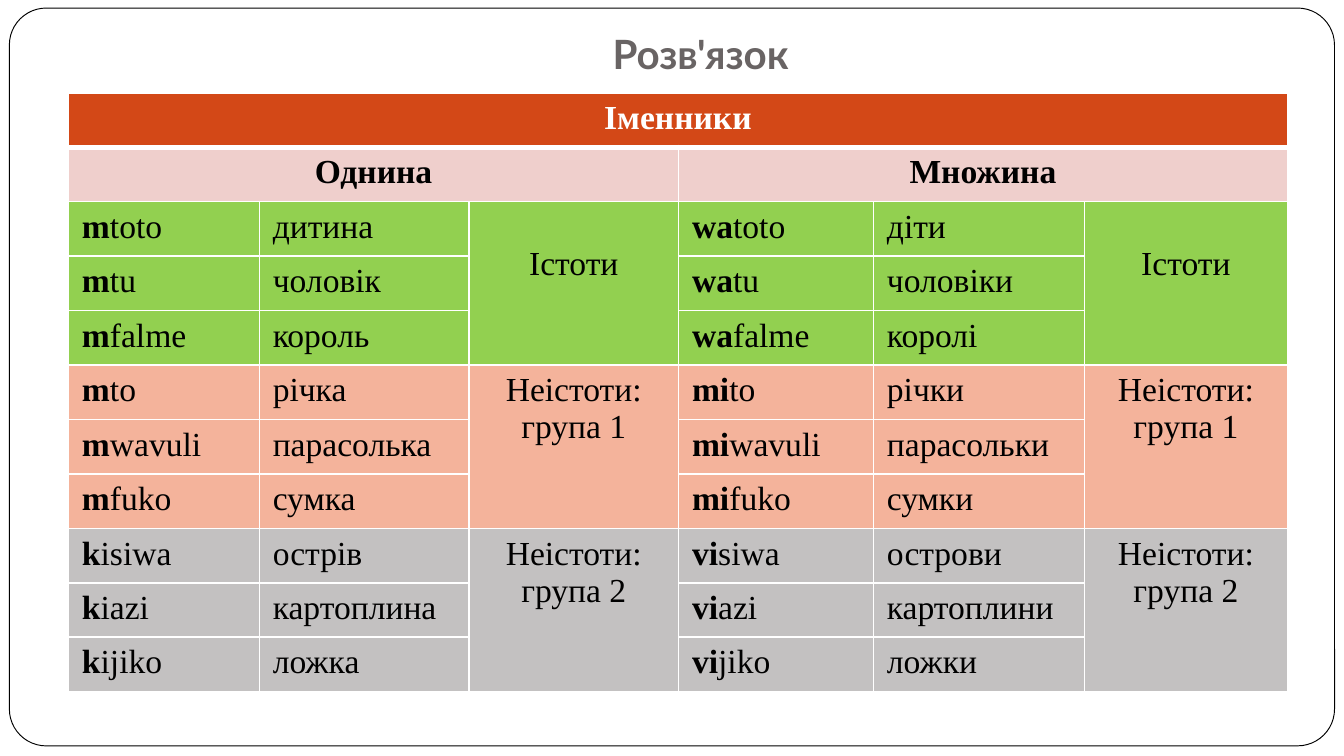
from lxml.etree import SubElement
from pptx import Presentation
from pptx.dml.color import RGBColor
from pptx.enum.shapes import MSO_SHAPE
from pptx.enum.text import MSO_ANCHOR, PP_ALIGN
from pptx.oxml.ns import qn
from pptx.util import Inches, Pt

COLORS = {
    "white": "FFFFFF", "black": "000000", "title": "696464",
    "header": "D34817", "number": "EFCFCC",
    "green": "92D050", "peach": "F4B39B", "gray": "C3C1C1",
}
COL_WIDTHS = [1.42, 1.56, 1.56, 1.45, 1.57, 1.51]
ROWS, TABLE_HEIGHT = 11, 4.46
GROUPS = [
    ("Істоти", "green", "m", "wa", [
        ("toto", "дитина", "toto", "діти"),
        ("tu", "чоловік", "tu", "чоловіки"),
        ("falme", "король", "falme", "королі")]),
    ("Неістоти: група 1", "peach", "m", "mi", [
        ("to", "річка", "to", "річки"),
        ("wavuli", "парасолька", "wavuli", "парасольки"),
        ("fuko", "сумка", "fuko", "сумки")]),
    ("Неістоти: група 2", "gray", "k", "vi", [
        ("isiwa", "острів", "siwa", "острови"),
        ("iazi", "картоплина", "azi", "картоплини"),
        ("ijiko", "ложка", "jiko", "ложки")]),
]


def rgb(name):
    return RGBColor.from_string(COLORS[name])


def write(cell, parts, color="black", align=PP_ALIGN.LEFT):
    p = cell.text_frame.paragraphs[0]
    p.alignment = align
    p.font.name, p.font.size = "Times New Roman", Pt(18)
    p.font.color.rgb = rgb(color)
    for text, bold in parts:
        r = p.add_run()
        r.text = text
        r.font.name, r.font.size, r.font.bold = "Times New Roman", Pt(18), bold
        r.font.color.rgb = rgb(color)


prs = Presentation()
prs.slide_width = Inches(10)
prs.slide_height = prs.slide_width * 9 // 16
s = prs.slides.add_slide(prs.slide_layouts[5])

title = s.shapes.title
title.left, title.top, title.width, title.height = map(Inches, (1, 0.22, 8.5, 0.46))
tf = title.text_frame
tf.text = "Розв'язок "
tf.vertical_anchor = MSO_ANCHOR.BOTTOM
tf.margin_bottom = Inches(0.1)
p = tf.paragraphs[0]
p.alignment = PP_ALIGN.CENTER
p.font.name, p.font.size, p.font.bold = "Lato", Pt(21.6), True
p.font.color.rgb = rgb("title")

frame = s.shapes.add_shape(MSO_SHAPE.ROUNDED_RECTANGLE, *map(Inches, (0.07, 0.06, 9.86, 5.49)))
frame.adjustments[0] = 0.05
frame.shadow.inherit = False
frame.fill.solid()
frame.fill.fore_color.rgb = rgb("white")
frame.line.color.rgb = rgb("black")
frame.line.width = Pt(0.5)
title.element.addprevious(frame.element)

table = s.shapes.add_table(ROWS, len(COL_WIDTHS), Inches(0.51), Inches(0.69),
                           Inches(sum(COL_WIDTHS)), Inches(TABLE_HEIGHT)).table
for col, width in zip(table.columns, COL_WIDTHS):
    col.width = Inches(width)

fills = ["header", "number"] + [group[1] for group in GROUPS for _ in group[4]]
for i, fill in enumerate(fills):
    table.rows[i].height = Inches(TABLE_HEIGHT / ROWS)
    for j in range(len(COL_WIDTHS)):
        cell = table.cell(i, j)
        tcPr = cell._tc.get_or_add_tcPr()
        for side in "LRTB":
            thick = (i, side) in ((0, "B"), (1, "T"))
            ln = SubElement(tcPr, qn("a:ln" + side), w=str(Pt(3 if thick else 1)))
            line_fill = SubElement(ln, qn("a:solidFill"))
            SubElement(line_fill, qn("a:srgbClr"), val=COLORS["white"])
        cell.fill.solid()
        cell.fill.fore_color.rgb = rgb(fill)

table.cell(0, 0).merge(table.cell(0, 5))
write(table.cell(0, 0), [("Іменники", True)], "white", PP_ALIGN.CENTER)
for j, number in ((0, "Однина"), (3, "Множина")):
    table.cell(1, j).merge(table.cell(1, j + 2))
    write(table.cell(1, j), [(number, True)], align=PP_ALIGN.CENTER)

for g, (label, _, singular, plural, words) in enumerate(GROUPS):
    top = 2 + 3 * g
    for i, (stem, meaning, plural_stem, plural_meaning) in enumerate(words, top):
        write(table.cell(i, 0), [(singular, True), (stem, False)])
        write(table.cell(i, 1), [(meaning, False)])
        write(table.cell(i, 3), [(plural, True), (plural_stem, False)])
        write(table.cell(i, 4), [(plural_meaning, False)])
    for j in (2, 5):
        cell = table.cell(top, j)
        cell.merge(table.cell(top + 2, j))
        write(cell, [(label, False)], align=PP_ALIGN.CENTER)
        if g == 0:
            cell.margin_top = Inches(0.33)

prs.save("out.pptx")
